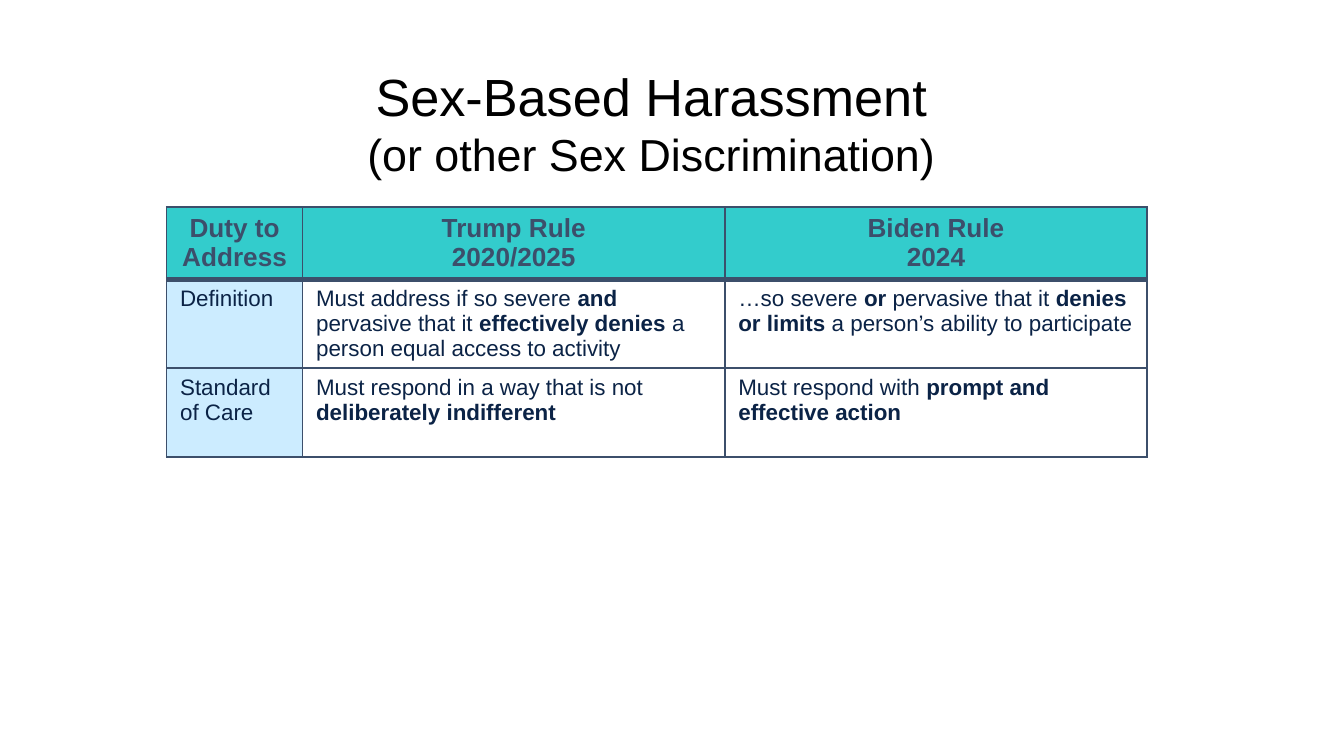
from lxml.etree import SubElement
from pptx import Presentation
from pptx.dml.color import RGBColor
from pptx.enum.text import MSO_ANCHOR, PP_ALIGN
from pptx.oxml.ns import qn
from pptx.util import Cm, Pt

COLORS = {
    "title": "000000",
    "border": "3C4F6B",
    "header": "33CCCC",
    "label": "CCECFF",
    "body": "0B2346",
}
COLUMN_WIDTHS = [2.57, 7.98, 7.98]
ROW_HEIGHTS = [1.36, 1.68, 1.68]
ROWS = [
    [["Duty to Address"], ["Trump Rule", "2020/2025"], ["Biden Rule", "2024"]],
    [
        ["Definition"],
        ["Must address if so severe **and** pervasive that it "
         "**effectively denies **a person equal access to activity"],
        ["…so severe **or **pervasive that it **denies or limits **"
         "a person’s ability to participate"],
    ],
    [
        ["Standard of Care"],
        ["Must respond in a way that is not **deliberately indifferent**"],
        ["Must respond with **prompt and effective action**"],
    ],
]


def write_line(paragraph, text, size, color, bold=False, alignment=PP_ALIGN.LEFT):
    paragraph.alignment = alignment
    for index, part in enumerate(text.split("**")):
        if not part:
            continue
        run = paragraph.add_run()
        run.text = part
        run.font.color.rgb = RGBColor.from_string(COLORS[color])
        values = {"name": "Arial", "size": Pt(size), "bold": bold or index % 2 == 1}
        for name, value in values.items():
            setattr(run.font, name, value)


def write_lines(text_frame, lines, **values):
    for index, text in enumerate(lines):
        paragraph = text_frame.add_paragraph() if index else text_frame.paragraphs[0]
        write_line(paragraph, text, **values)


def set_borders(cell, widths):
    properties = cell._tc.get_or_add_tcPr()
    for side in "LRTB":
        line = SubElement(properties, qn(f"a:ln{side}"), w=str(Pt(widths.get(side, 1))))
        fill = SubElement(line, qn("a:solidFill"))
        SubElement(fill, qn("a:srgbClr"), val=COLORS["border"])


def set_fill(cell, color):
    if color:
        cell.fill.solid()
        cell.fill.fore_color.rgb = RGBColor.from_string(COLORS[color])
    else:
        cell.fill.background()


def place_title(slide, left, top, width, height):
    title = slide.shapes.title
    box = {"left": left, "top": top, "width": width, "height": height}
    for name, value in box.items():
        setattr(title, name, Cm(value))
    text_frame = title.text_frame
    text_frame.word_wrap = True
    text_frame.vertical_anchor = MSO_ANCHOR.MIDDLE
    lines = [("Sex-Based Harassment", 28), ("(or other Sex Discrimination)", 24)]
    for index, (text, size) in enumerate(lines):
        paragraph = text_frame.add_paragraph() if index else text_frame.paragraphs[0]
        write_line(paragraph, text, size, "title", alignment=PP_ALIGN.CENTER)


def place_rule_table(slide, left, top):
    table = slide.shapes.add_table(
        len(ROWS), len(COLUMN_WIDTHS), Cm(left), Cm(top),
        Cm(sum(COLUMN_WIDTHS)), Cm(sum(ROW_HEIGHTS)),
    ).table
    table.horz_banding = False
    for column, width in zip(table.columns, COLUMN_WIDTHS):
        column.width = Cm(width)
    for row, height in zip(table.rows, ROW_HEIGHTS):
        row.height = Cm(height)

    header_format = {"size": 14, "color": "border", "bold": True,
                     "alignment": PP_ALIGN.CENTER}
    body_format = {"size": 12, "color": "body"}
    header_rule = {0: {"B": 3}, 1: {"T": 3}}
    for row_index, row in enumerate(ROWS):
        for column_index, lines in enumerate(row):
            cell = table.cell(row_index, column_index)
            is_header = row_index == 0
            set_borders(cell, header_rule.get(row_index, {}))
            label_fill = "label" if column_index == 0 else None
            set_fill(cell, "header" if is_header else label_fill)
            write_lines(cell.text_frame, lines,
                        **(header_format if is_header else body_format))


def main():
    presentation = Presentation()
    presentation.slide_width = Cm(25.4)
    presentation.slide_height = Cm(14.29)
    slide = presentation.slides.add_slide(presentation.slide_layouts[5])
    place_title(slide, 6.4, 1.07, 11.81, 2.49)
    place_rule_table(slide, 3.15, 3.91)
    presentation.save("out.pptx")


if __name__ == "__main__":
    main()
